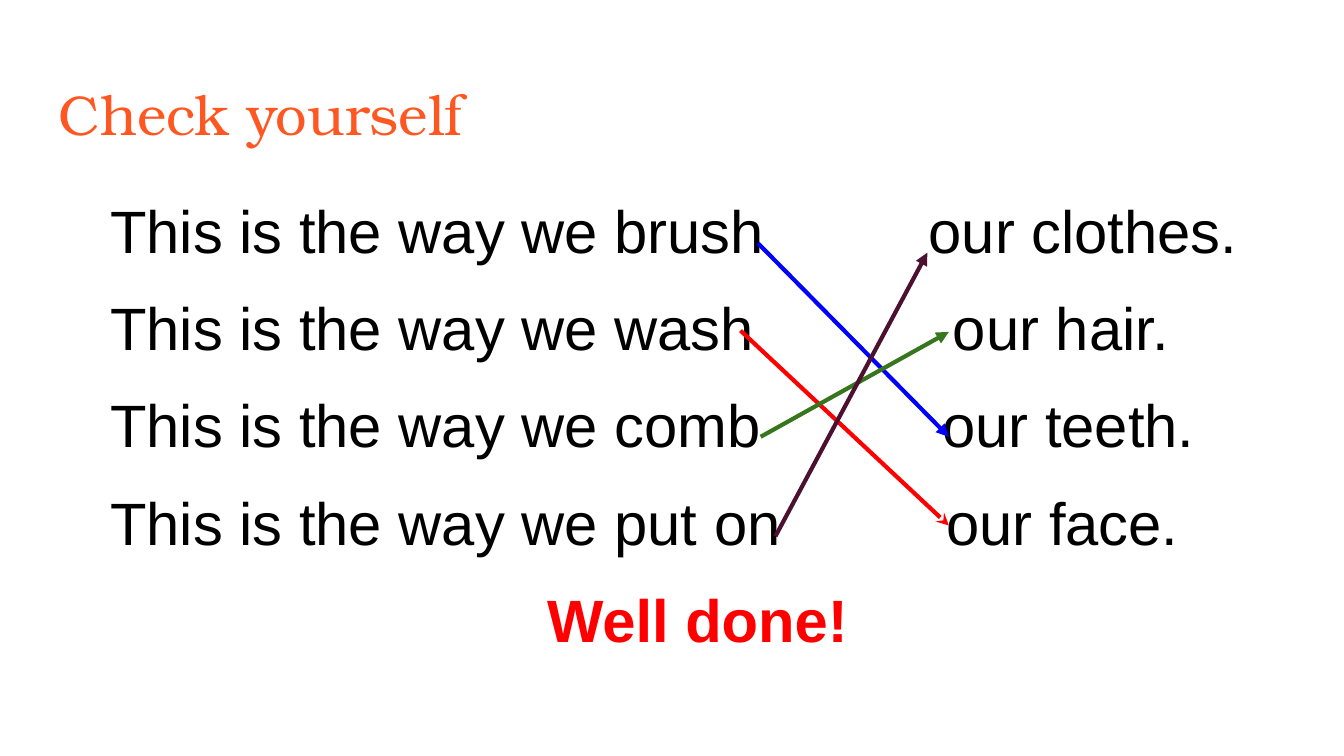
"""Builds the "Check yourself" slide with matched song lines."""
from lxml import etree
from pptx import Presentation
from pptx.dml.color import RGBColor
from pptx.enum.shapes import MSO_CONNECTOR
from pptx.enum.text import MSO_ANCHOR, PP_ALIGN
from pptx.oxml.ns import qn
from pptx.util import Inches, Pt

STRAIGHT = MSO_CONNECTOR.STRAIGHT
TOP = MSO_ANCHOR.TOP
LEFT, CENTER = PP_ALIGN.LEFT, PP_ALIGN.CENTER

ORANGE = RGBColor(0xFF, 0x57, 0x22)
BLACK = RGBColor(0, 0, 0)
RED = RGBColor(0xFF, 0, 0)
BLUE = RGBColor(0, 0, 0xFF)
GREEN = RGBColor(0x38, 0x76, 0x1D)
PLUM = RGBColor(0x4C, 0x11, 0x30)

HEADING = "Check yourself"
SONG_LINES = [
    ("This is the way we brush", "our clothes.", 6.09),
    ("This is the way we wash", "our hair.", 6.27),
    ("This is the way we comb", "our teeth.", 6.19),
    ("This is the way we put on", "our face.", 6.22),
]
PRAISE = "Well done!"
MATCHES = [
    ((5.64, 1.81), (7.06, 3.25), BLUE, "triangle"),
    ((5.51, 2.46), (7.06, 3.91), RED, "stealth"),
    ((5.66, 3.25), (7.06, 2.47), GREEN, "triangle"),
    ((5.77, 3.99), (6.9, 1.88), PLUM, "triangle"),
]

HEADING_FONT = {"name": "TeX Gyre Bonum", "size": Pt(30)}
SONG_FONT = {"name": "Arial", "size": Pt(32)}
SONG_SPACING = {"line_spacing": 1.15, "space_before": Pt(8)}
INSET, INDENT = 0.1, 0.38


def apply(target, formats):
    for name, value in formats.items():
        setattr(target, name, value)


def add_frame(slide, top, height, left_inset):
    frame = slide.shapes.add_textbox(
        Inches(0.34), Inches(top), Inches(9.32), Inches(height)).text_frame
    apply(frame, {"word_wrap": True, "vertical_anchor": TOP,
                  "margin_left": Inches(left_inset), "margin_right": Inches(INSET),
                  "margin_top": Inches(INSET), "margin_bottom": Inches(INSET)})
    return frame


def write(paragraph, text, font, color, align=LEFT):
    paragraph.alignment = align
    run = paragraph.add_run()
    run.text = text
    apply(run.font, font)
    run.font.color.rgb = color


def add_tab_stop(paragraph, position):
    stops = etree.SubElement(paragraph._p.get_or_add_pPr(), qn("a:tabLst"))
    etree.SubElement(stops, qn("a:tab"), pos=str(Inches(position)), algn="l")


def add_arrow(slide, start, end, color, head):
    arrow = slide.shapes.add_connector(STRAIGHT, *map(Inches, start + end))
    arrow.line.color.rgb = color
    arrow.line.width = Pt(2.25)
    etree.SubElement(arrow.line._get_or_add_ln(), qn("a:tailEnd"), type=head)
    etree.SubElement(arrow._element.spPr, qn("a:effectLst"))


def main():
    deck = Presentation()
    deck.slide_width = Inches(10)
    deck.slide_height = deck.slide_width * 9 // 16
    slide = deck.slides.add_slide(deck.slide_layouts[6])

    heading = add_frame(slide, 0.49, 0.63, INSET)
    write(heading.paragraphs[0], HEADING, HEADING_FONT, ORANGE)

    song = add_frame(slide, 1.26, 3.74, INSET + INDENT)
    for index, (opening, ending, stop) in enumerate(SONG_LINES):
        line = song.add_paragraph() if index else song.paragraphs[0]
        apply(line, SONG_SPACING)
        add_tab_stop(line, stop)
        write(line, f"{opening}\t{ending}", SONG_FONT, BLACK)
    praise = song.add_paragraph()
    apply(praise, SONG_SPACING)
    write(praise, PRAISE, {**SONG_FONT, "bold": True}, RED, CENTER)

    for match in MATCHES:
        add_arrow(slide, *match)
    deck.save("out.pptx")


if __name__ == "__main__":
    main()
